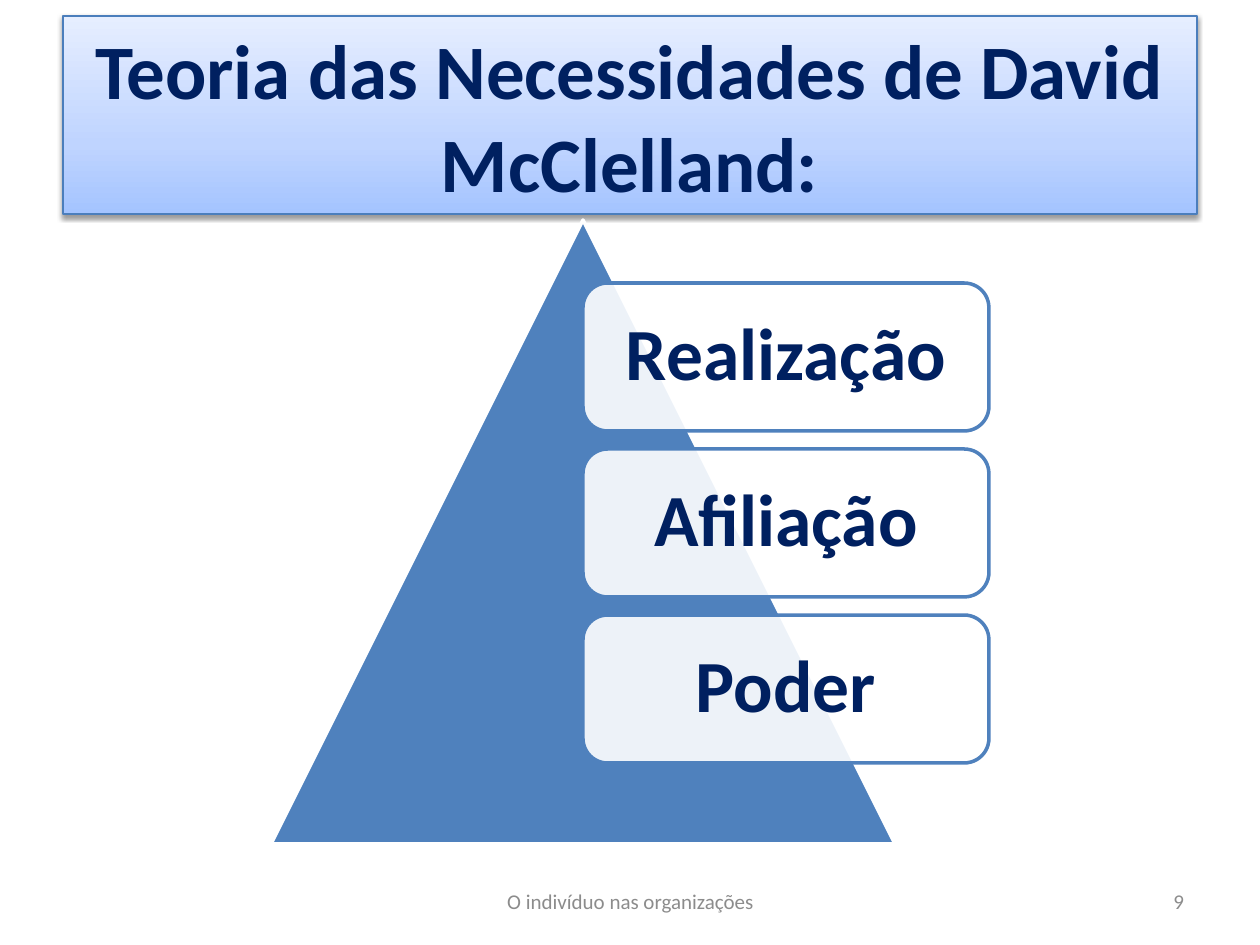
"""Build a slide with a titled pyramid of three needs."""
import dataclasses
import typing

import lxml.etree
import pptx
import pptx.dml.color
import pptx.enum.shapes
import pptx.enum.text
import pptx.oxml
import pptx.oxml.ns
import pptx.util

UNIT = 914400 / 126
KIND = pptx.enum.shapes.MSO_SHAPE
ALIGN = pptx.enum.text.PP_ALIGN
MID = pptx.enum.text.MSO_ANCHOR.MIDDLE
SPACE = 'xmlns:a="http://schemas.openxmlformats.org/drawingml/2006/main"'


@dataclasses.dataclass(frozen=True)
class Theme:
    font: str = "Calibri"
    navy: str = "002060"
    blue: str = "4F81BD"
    edge: str = "4B7EBC"
    white: str = "FFFFFF"
    gray: str = "8C8C8C"
    black: str = "000000"
    fade: tuple = ((0, "A4C4FF"), (35, "BFD4FF"), (100, "E6EEFF"))
    title: int = 44
    need: int = 42
    foot: int = 12


class Box(typing.NamedTuple):
    left: int
    top: int
    width: int
    height: int


@dataclasses.dataclass(frozen=True)
class Label:
    text: str
    size: int
    color: str
    bold: bool = False
    align: typing.Any = ALIGN.CENTER
    inset: int = 13
    lines: float = 1.0


THEME = Theme()


def px(size: int) -> int:
    """Turn px into EMU."""
    return round(size * UNIT)


def rgb(code: str) -> pptx.dml.color.RGBColor:
    """Read a hex colour."""
    return pptx.dml.color.RGBColor.from_string(code)


def style(item: typing.Any, form: dict) -> None:
    """Set attributes from format values."""
    for name, value in form.items():
        setattr(item, name, value)


def write(shape: typing.Any, label: Label) -> None:
    """Put a label in a shape."""
    frame = shape.text_frame
    sides = ("left", "right", "top", "bottom")
    form = {f"margin_{side}": px(label.inset) for side in sides}
    style(frame, form | {"word_wrap": True, "vertical_anchor": MID})
    para = frame.paragraphs[0]
    style(para, {"alignment": label.align, "line_spacing": label.lines})
    run = para.add_run()
    run.text = label.text
    style(run.font, {"name": THEME.font, "size": pptx.util.Pt(label.size),
                     "bold": label.bold})
    run.font.color.rgb = rgb(label.color)


def draw(slide: typing.Any, kind: typing.Any, box: Box, fill: str,
         line: str, width: float) -> typing.Any:
    """Add a filled and outlined shape."""
    shape = slide.shapes.add_shape(kind, *map(px, box))
    shape.shadow.inherit = False
    shape.fill.solid()
    shape.fill.fore_color.rgb = rgb(fill)
    shape.line.color.rgb = rgb(line)
    shape.line.width = pptx.util.Pt(width)
    return shape


def note(slide: typing.Any, box: Box, label: Label) -> None:
    """Add a text box."""
    write(slide.shapes.add_textbox(*map(px, box)), label)


def veil(shape: typing.Any, alpha: int) -> None:
    """Make a solid fill partly clear."""
    color = shape.fill._xPr.find(".//" + pptx.oxml.ns.qn("a:srgbClr"))
    lxml.etree.SubElement(color, pptx.oxml.ns.qn("a:alpha"),
                          val=str(alpha * 1000))


def shade(shape: typing.Any) -> None:
    """Give a shape the theme gradient and a soft shadow."""
    stops = "".join(f'<a:gs pos="{pos * 1000}"><a:srgbClr val="{code}"/></a:gs>'
                    for pos, code in THEME.fade)
    grad = pptx.oxml.parse_xml(
        f'<a:gradFill {SPACE} rotWithShape="1"><a:gsLst>{stops}</a:gsLst>'
        '<a:lin ang="16200000" scaled="0"/></a:gradFill>')
    cast = pptx.oxml.parse_xml(
        f'<a:outerShdw {SPACE} blurRad="{pptx.util.Pt(3.1)}" '
        f'dist="{pptx.util.Pt(1.6)}" dir="5400000" rotWithShape="0">'
        f'<a:srgbClr val="{THEME.black}"><a:alpha val="38000"/></a:srgbClr>'
        '</a:outerShdw>')
    props = shape.fill._xPr
    props.replace(props.find(pptx.oxml.ns.qn("a:solidFill")), grad)
    props.find(pptx.oxml.ns.qn("a:effectLst")).append(cast)


def main() -> None:
    """Build and save the slide."""
    deck = pptx.Presentation()
    style(deck, {"slide_width": px(1260), "slide_height": px(945)})
    slide = deck.slides.add_slide(deck.slide_layouts[6])

    head = draw(slide, KIND.RECTANGLE, Box(63, 16, 1134, 198),
                THEME.white, THEME.edge, 0.75)
    shade(head)
    write(head, Label("Teoria das Necessidades de David McClelland:",
                      THEME.title, THEME.navy, True))

    draw(slide, KIND.ISOSCELES_TRIANGLE, Box(271, 220, 624, 624),
         THEME.blue, THEME.white, 2)
    for row, need in enumerate(("Realização", "Afiliação", "Poder")):
        card = draw(slide, KIND.ROUNDED_RECTANGLE,
                    Box(583, 283 + 166 * row, 406, 148),
                    THEME.white, THEME.blue, 2)
        veil(card, 90)
        write(card, Label(need, THEME.need, THEME.navy, True,
                          inset=21, lines=0.9))

    note(slide, Box(431, 876, 399, 50),
         Label("O indivíduo nas organizações", THEME.foot, THEME.gray))
    note(slide, Box(903, 876, 294, 50),
         Label("9", THEME.foot, THEME.gray, align=ALIGN.RIGHT))
    deck.save("out.pptx")


if __name__ == "__main__":
    main()
